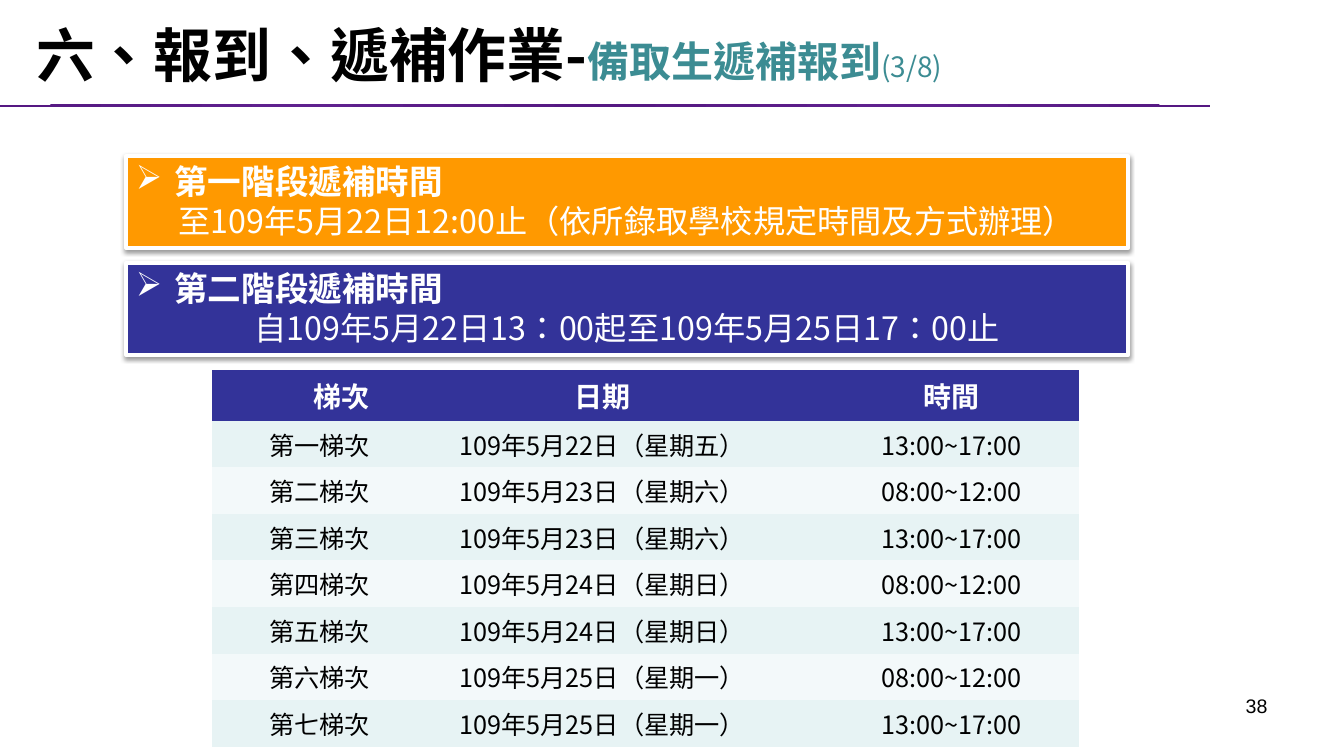
from lxml import etree
from pptx import Presentation
from pptx.dml.color import RGBColor
from pptx.enum.lang import MSO_LANGUAGE_ID
from pptx.enum.shapes import MSO_SHAPE
from pptx.enum.text import MSO_ANCHOR, PP_ALIGN
from pptx.oxml import parse_xml
from pptx.oxml.ns import qn
from pptx.util import Inches, Pt

RECT = MSO_SHAPE.RECTANGLE
LEFT, CENTER, RIGHT = PP_ALIGN.LEFT, PP_ALIGN.CENTER, PP_ALIGN.RIGHT
MIDDLE = MSO_ANCHOR.MIDDLE
TAIWAN = MSO_LANGUAGE_ID.TRADITIONAL_CHINESE
A_NS = 'xmlns:a="http://schemas.openxmlformats.org/drawingml/2006/main"'
CJK, LATIN = "Noto Sans CJK SC", "Arial"

WHITE = RGBColor(0xFF, 0xFF, 0xFF)
BLACK = RGBColor(0, 0, 0)
INDIGO = RGBColor(0x33, 0x33, 0x99)
ORANGE = RGBColor(0xFF, 0x99, 0x00)
TEAL = RGBColor(0x3C, 0x8C, 0x93)
PURPLE = RGBColor(0x55, 0x18, 0x82)
VIOLET = RGBColor(0x5F, 0x21, 0x8E)
BANDS = [RGBColor(0xE7, 0xF3, 0xF4), RGBColor(0xF3, 0xF9, 0xFA)]

# Content
TITLE = [("六、報到、遞補作業-", 42, BLACK, True),
         ("備取生遞補報到", 30, TEAL, True),
         ("(3/8)", 20, TEAL, False)]
STAGES = [
    ("第一階段遞補時間", "至109年5月22日12:00止（依所錄取學校規定時間及方式辦理）", ORANGE),
    ("第二階段遞補時間", "自109年5月22日13：00起至109年5月25日17：00止", INDIGO),
]
HEADER = ("梯次", "日期", "時間")
MORNING, AFTERNOON = "08:00~12:00", "13:00~17:00"
SESSIONS = [
    ("第一梯次", "109年5月22日（星期五）", AFTERNOON),
    ("第二梯次", "109年5月23日（星期六）", MORNING),
    ("第三梯次", "109年5月23日（星期六）", AFTERNOON),
    ("第四梯次", "109年5月24日（星期日）", MORNING),
    ("第五梯次", "109年5月24日（星期日）", AFTERNOON),
    ("第六梯次", "109年5月25日（星期一）", MORNING),
    ("第七梯次", "109年5月25日（星期一）", AFTERNOON),
]
PAGE = "38"

# Layout, in inches
STAGE_LEFT, STAGE_TOP, STAGE_WIDTH, STAGE_HEIGHT, STAGE_STEP = 1.25, 1.55, 9.94, 0.91, 1.06
TABLE_LEFT, TABLE_TOP, ROW_HEIGHT = 2.1, 3.67, 0.37
COLUMNS = [1.67, 4.41, 2.52]


def box(left, top, width, height):
    return [Inches(v) for v in (left, top, width, height)]


def set_font(font, size, color, bold=False, name=CJK):
    font.size, font.bold, font.name = Pt(size), bold, name
    font.color.rgb = color
    if name == CJK:
        font.language_id = TAIWAN


def add_run(paragraph, text, size, color, bold=False, name=CJK):
    run = paragraph.add_run()
    run.text = text
    set_font(run.font, size, color, bold, name)
    # East Asian text takes its typeface from its own element
    latin = run._r.find(".//" + qn("a:latin"))
    latin.addnext(parse_xml(f'<a:ea {A_NS} typeface="{name}"/>'))


def add_title(slide):
    frame = slide.shapes.add_textbox(*box(0.26, 0.23, 12, 0.69)).text_frame
    frame.word_wrap = True
    frame.vertical_anchor = MIDDLE
    paragraph = frame.paragraphs[0]
    paragraph.line_spacing = 0.9
    for part in TITLE:
        add_run(paragraph, *part)


def add_title_rule(slide):
    rule = slide.shapes.add_shape(RECT, *box(0, 1.04, 12, 0.02))
    rule.shadow.inherit = False
    rule.line.fill.background()
    rule.fill.gradient()
    gradient = rule._element.spPr.find(qn("a:gradFill"))
    stops = "".join(f'<a:gs pos="{pos}"><a:srgbClr val="{color}"/></a:gs>'
                    for pos, color in ((0, PURPLE), (50000, VIOLET), (100000, PURPLE)))
    gradient.getparent().replace(gradient, parse_xml(
        f'<a:gradFill {A_NS}><a:gsLst>{stops}</a:gsLst><a:path path="circle">'
        '<a:fillToRect l="50000" t="50000" r="50000" b="50000"/></a:path></a:gradFill>'))


def add_stage(slide, index, heading, period, color):
    top = STAGE_TOP + index * STAGE_STEP
    stage = slide.shapes.add_shape(RECT, *box(STAGE_LEFT, top, STAGE_WIDTH, STAGE_HEIGHT))
    stage.fill.solid()
    stage.fill.fore_color.rgb = color
    stage.line.color.rgb = WHITE
    stage.line.width = Pt(3)
    stage.shadow.inherit = False
    effects = stage._element.spPr.find(qn("a:effectLst"))
    effects.append(parse_xml(
        f'<a:outerShdw {A_NS} blurRad="{Pt(3.1)}" dist="{Pt(1.6)}" dir="5400000" rotWithShape="0">'
        '<a:srgbClr val="000000"><a:alpha val="38000"/></a:srgbClr></a:outerShdw>'))

    frame = stage.text_frame
    frame.word_wrap = True
    frame.vertical_anchor = MSO_ANCHOR.TOP
    first, second = frame.paragraphs[0], frame.add_paragraph()
    first.alignment, second.alignment = LEFT, CENTER
    props = first._p.get_or_add_pPr()
    props.set("marL", str(Inches(0.38)))
    props.set("indent", str(-Inches(0.38)))
    etree.SubElement(props, qn("a:buChar")).set("char", "➢")
    add_run(first, heading, 24, WHITE, True)
    add_run(second, period, 23, WHITE)


def add_sessions(slide):
    rows = [HEADER] + SESSIONS
    table = slide.shapes.add_table(len(rows), len(COLUMNS), *box(
        TABLE_LEFT, TABLE_TOP, sum(COLUMNS), ROW_HEIGHT * len(rows))).table
    for column, width in zip(table.columns, COLUMNS):
        column.width = Inches(width)
    # No style, so that cells show no borders
    table._tbl.tblPr.find(qn("a:tableStyleId")).text = "{2D5ABB26-0587-4C30-8999-92F81FD0307C}"
    for r, row in enumerate(rows):
        is_header = r == 0
        for c, text in enumerate(row):
            cell = table.cell(r, c)
            cell.fill.solid()
            cell.fill.fore_color.rgb = INDIGO if is_header else BANDS[(r - 1) % 2]
            cell.vertical_anchor = MIDDLE
            paragraph = cell.text_frame.paragraphs[0]
            paragraph.alignment = RIGHT if c == 0 else CENTER
            add_run(paragraph, text, 20 if is_header else 18,
                    WHITE if is_header else BLACK, is_header)


def add_page_number(slide):
    frame = slide.shapes.add_textbox(*box(9.56, 6.83, 3.11, 0.52)).text_frame
    frame.word_wrap = True
    frame.paragraphs[0].alignment = RIGHT
    add_run(frame.paragraphs[0], PAGE, 14, BLACK, name=LATIN)


def main():
    prs = Presentation()
    prs.slide_width, prs.slide_height = Inches(13.33), Inches(7.5)
    slide = prs.slides.add_slide(prs.slide_layouts[6])
    add_title_rule(slide)
    add_sessions(slide)
    for index, stage in enumerate(STAGES):
        add_stage(slide, index, *stage)
    add_title(slide)
    add_page_number(slide)
    prs.save("out.pptx")


if __name__ == "__main__":
    main()
